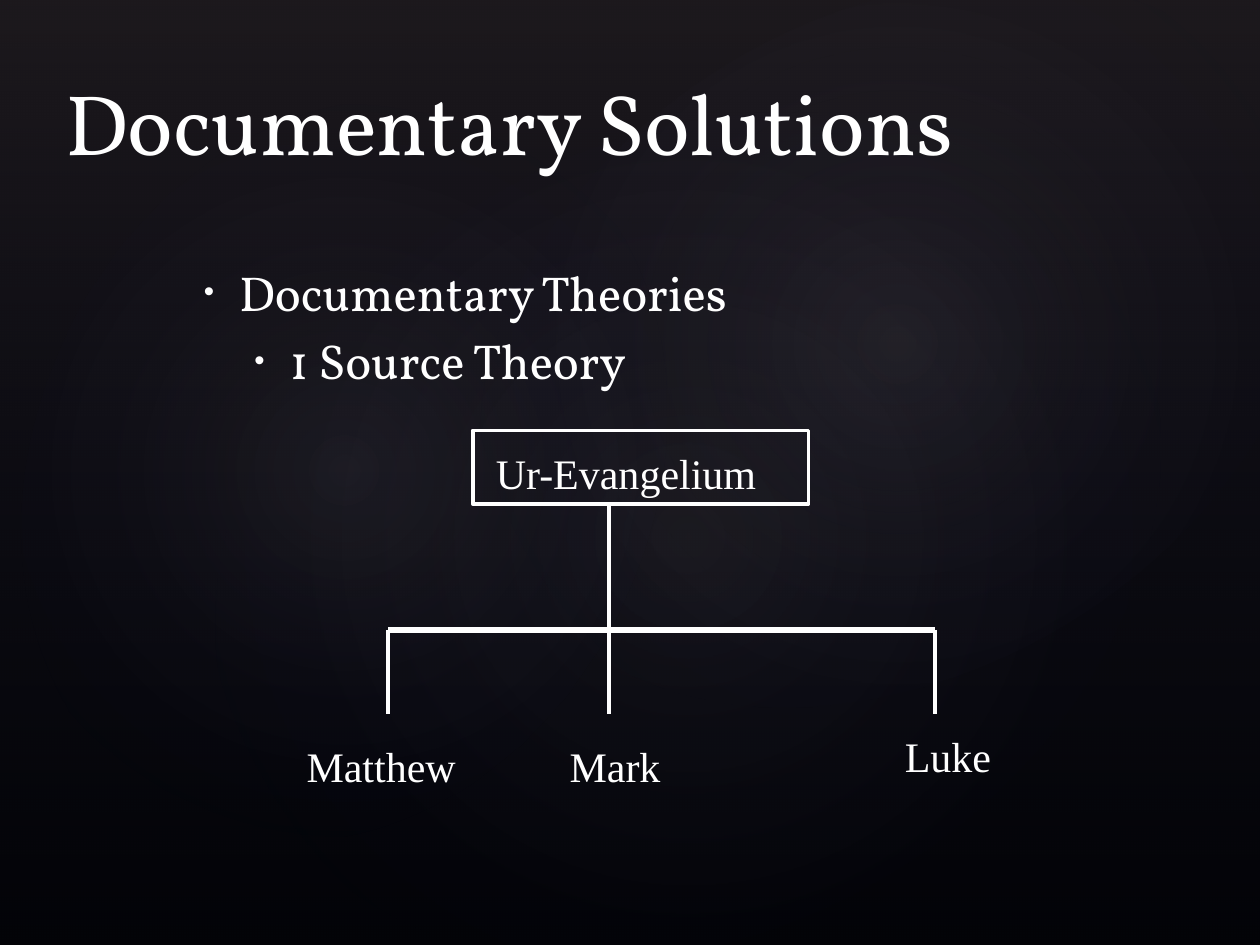
from lxml.etree import SubElement
from pptx import Presentation
from pptx.dml.color import RGBColor
from pptx.enum.shapes import MSO_CONNECTOR, MSO_SHAPE
from pptx.enum.text import MSO_ANCHOR, PP_ALIGN
from pptx.oxml import parse_xml
from pptx.oxml.ns import qn
from pptx.util import Cm, Pt

COLORS = {
    "night": "000000",
    "text": "FFFFFF",
    "haze": "504652",
    "navy": "242852",
    "glow": "C4BCC6",
}
NS = "http://schemas.openxmlformats.org/drawingml/2006/main"
LINEAR = '<a:lin ang="5400000" scaled="0"/>'
RADIAL = ('<a:path path="circle"><a:fillToRect l="50000" t="50000" '
          'r="50000" b="50000"/></a:path>')

prs = Presentation()
prs.slide_width, prs.slide_height = Cm(25.4), Cm(19.05)
slide = prs.slides.add_slide(prs.slide_layouts[6])
slide.background.fill.solid()
slide.background.fill.fore_color.rgb = RGBColor.from_string(COLORS["night"])
white = RGBColor.from_string(COLORS["text"])


def add_backdrop(preset, bounds, angle, stops, direction):
    backdrop = slide.shapes.add_shape(preset, *map(Cm, bounds))
    backdrop.shadow.inherit = False
    backdrop.line.fill.background()
    backdrop.rotation = angle
    stop_xml = "".join(
        f'<a:gs pos="{pos * 1000}"><a:srgbClr val="{COLORS[color]}">'
        f'<a:alpha val="{alpha * 1000}"/></a:srgbClr></a:gs>'
        for pos, color, alpha in stops)
    gradient = parse_xml(f'<a:gradFill xmlns:a="{NS}" rotWithShape="1">'
                         f'<a:gsLst>{stop_xml}</a:gsLst>{direction}</a:gradFill>')
    backdrop.element.spPr.find(qn("a:prstGeom")).addnext(gradient)


def add_text(bounds, lines, size, font, anchor, align, wrap, before):
    frame = slide.shapes.add_textbox(*map(Cm, bounds)).text_frame
    frame.word_wrap = wrap
    frame.vertical_anchor = anchor
    for index, line in enumerate(lines):
        paragraph = frame.paragraphs[0] if index == 0 else frame.add_paragraph()
        paragraph.alignment = align
        paragraph.space_before = Pt(before)
        run = paragraph.add_run()
        run.text = line
        run.font.size = Pt(size)
        run.font.name = font
        run.font.color.rgb = white
    return frame


add_backdrop(MSO_SHAPE.RECTANGLE, (0, 0, 25.4, 19.05), 0,
             [(0, "haze", 36), (100, "navy", 10)], LINEAR)
for bounds, angle, alpha in [
    ((3.81, 2.9, 20.12, 15.85), 328.7, 7),
    ((-0.76, 3.25, 15.39, 12.45), 294.3, 8),
    ((9.09, 0.33, 18.01, 13.21), 328.7, 8),
]:
    add_backdrop(MSO_SHAPE.OVAL, bounds, angle,
                 [(0, "glow", alpha), (58, "navy", 0)], RADIAL)

theories = add_text((3.81, 3.61, 16.94, 5.92),
                    ["Documentary Theories", "1 Source Theory"],
                    28, "Vollkorn", MSO_ANCHOR.MIDDLE, PP_ALIGN.LEFT, True, 5.6)
for level, paragraph in enumerate(theories.paragraphs):
    paragraph.level = level
    props = paragraph._p.get_or_add_pPr()
    props.set("marL", str(Cm(0.76 + 1.02 * level)))
    props.set("indent", str(Cm(-0.71)))
    SubElement(props, qn("a:buSzPct"), val="60000")
    SubElement(props, qn("a:buFont"), typeface="Arial")
    SubElement(props, qn("a:buChar"), char="•")

add_text((1.07, 1.07, 20.96, 2.54), ["Documentary Solutions"],
         49, "Vollkorn", MSO_ANCHOR.BOTTOM, PP_ALIGN.LEFT, True, 0)

source_box = slide.shapes.add_shape(
    MSO_SHAPE.RECTANGLE, Cm(9.53), Cm(8.68), Cm(6.77), Cm(1.48))
source_box.shadow.inherit = False
source_box.fill.background()
source_box.line.color.rgb = white
source_box.line.width = Pt(2.25)

matthew_x, mark_x, luke_x = 7.83, 12.28, 18.84
source_y, branch_y, gospel_y = 10.16, 12.7, 14.39
branches = [
    (mark_x, source_y, mark_x, branch_y, 2.25),
    (matthew_x, branch_y, luke_x, branch_y, 3),
]
branches += [(x, branch_y, x, gospel_y, 2.25) for x in (matthew_x, mark_x, luke_x)]
for *ends, width in branches:
    branch = slide.shapes.add_connector(MSO_CONNECTOR.STRAIGHT, *map(Cm, ends))
    branch.line.color.rgb = white
    branch.line.width = Pt(width)
    SubElement(branch.element.spPr, qn("a:effectLst"))

for label, left, top, width in [
    ("Ur-Evangelium ", 9.73, 8.89, 5.99),
    ("Matthew", 5.92, 14.81, 3.53),
    ("Mark", 11.23, 14.81, 2.34),
    ("Luke", 17.98, 14.61, 2.26),
]:
    add_text((left, top, width, 1.27), [label], 24, "Times New Roman",
             MSO_ANCHOR.TOP, PP_ALIGN.CENTER, False, 4.8)

prs.save("out.pptx")
